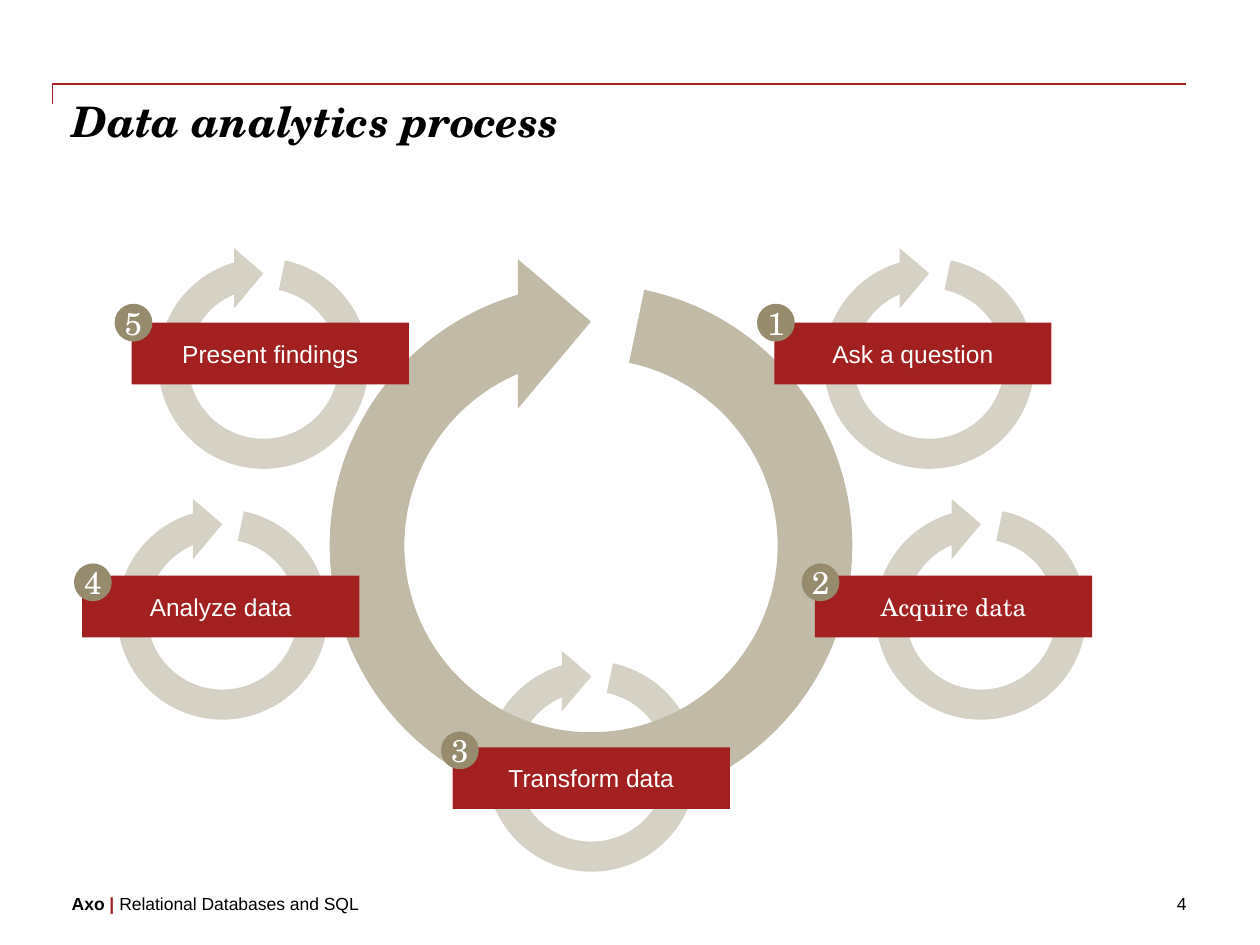
from pptx import Presentation
from pptx.dml.color import RGBColor as Rgb
from pptx.enum.shapes import MSO_SHAPE as Kind
from pptx.enum.text import MSO_ANCHOR as Anchor, MSO_AUTO_SIZE as Auto, PP_ALIGN as Align
from pptx.util import Pt

SERIF, SANS = "TeX Gyre Schola", "Arial"
RED, TAN, PALE, OLIVE = "A32020", "C0BAA7", "D5D1C5", "968C6D"
BLACK, WHITE = "000000", "FFFFFF"
ARROW = (0.125, 11.423, 204.577, 7.061, 0.125)
FLAT = dict.fromkeys(("margin_left", "margin_top", "margin_right", "margin_bottom"), 0)

STEPS = [
    ("Ask a question", SANS, (462.2, 139), (442.5, 184.3), (432.6, 173.6)),
    ("Acquire data", SERIF, (491.8, 282.3), (465.7, 329), (458.1, 322)),
    ("Transform data", SANS, (269.2, 369.2), (258.7, 427), (252, 418)),
    ("Analyze data", SANS, (58.3, 282.3), (47, 329), (42.3, 322)),
    ("Present findings", SANS, (81.8, 139), (75.3, 184.3), (65.5, 173.6)),
]


def apply(item, values):
    """Set each attribute of an item from a dict."""
    for name, value in values.items():
        setattr(item, name, value)


def tint(hue):
    """Turn a hex string into a colour."""
    return Rgb.from_string(hue)


def write(frame, runs, align=Align.LEFT, **values):
    """Write one paragraph of (text, colour, font values) runs."""
    apply(frame, {"word_wrap": True, "auto_size": Auto.NONE} | values)
    para = frame.paragraphs[0]
    para.alignment = align
    for text, hue, style in runs:
        run = para.add_run()
        run.text = text
        apply(run.font, style)
        run.font.color.rgb = tint(hue)


def shape(slide, kind, box, hue):
    """Add a flat filled shape without outline."""
    item = slide.shapes.add_shape(kind, *map(Pt, box))
    item.shadow.inherit = False
    item.fill.solid()
    item.fill.fore_color.rgb = tint(hue)
    item.line.fill.background()
    return item


def ring(slide, box, hue):
    """Add a circular arrow that starts at the top of its box."""
    item = shape(slide, Kind.CIRCULAR_ARROW, box, hue)
    for i, value in enumerate(ARROW):
        item.adjustments[i] = value
    item.rotation = 270


def label(slide, kind, box, hue, text, style, **values):
    """Add a shape with white centred text."""
    item = shape(slide, kind, box, hue)
    write(item.text_frame, [(text, WHITE, style)], Align.CENTER,
          vertical_anchor=Anchor.MIDDLE, **values)


def head(slide, box):
    """Draw the corner rule and the title below it."""
    x, y, w, h = box
    pen = slide.shapes.build_freeform(Pt(x), Pt(y + 11.5))
    pen.add_line_segments([(Pt(x), Pt(y)), (Pt(x + w), Pt(y))], close=False)
    rule = pen.convert_to_shape()
    rule.shadow.inherit = False
    rule.fill.background()
    rule.line.color.rgb = tint(RED)
    rule.line.width = Pt(1)
    title = slide.shapes.title
    apply(title, {"left": Pt(x + 11.5), "top": Pt(y + 6.7),
                  "width": Pt(w - 12), "height": Pt(h)})
    style = {"name": SERIF, "size": Pt(24), "bold": True, "italic": True}
    write(title.text_frame, [("Data analytics process", BLACK, style)],
          vertical_anchor=Anchor.TOP, **FLAT)


def cycle(slide, box):
    """Draw the large ring with the five numbered steps around it."""
    x, y, size = box
    for _, _, spot, _, _ in STEPS:
        ring(slide, (x + spot[0], y + spot[1], 137.5, 137.5), PALE)
    ring(slide, (x + 167.1, y + 141.1, size, size), TAN)
    for text, font, _, spot, _ in STEPS:
        label(slide, Kind.RECTANGLE, (x + spot[0], y + spot[1], 158.4, 35.3), RED,
              text, {"name": font, "size": Pt(14)})
    for i, (*_, spot) in enumerate(STEPS, 1):
        label(slide, Kind.OVAL, (x + spot[0], y + spot[1], 21.6, 21.6), OLIVE,
              str(i), {"name": SERIF, "size": Pt(18)}, **FLAT)


def foot(slide, box):
    """Write the footer at the left and the page number at the right."""
    x, y, w, h = box
    plain = {"name": SANS, "size": Pt(10), "bold": False}
    bold = plain | {"bold": True}
    name = [("Axo", BLACK, bold), (" | ", RED, bold),
            ("Relational Databases and SQL", BLACK, plain)]
    parts = [(x, w - 120, name, Align.LEFT),
             (x + w - 120, 120, [("4", BLACK, plain)], Align.RIGHT)]
    for left, wide, runs, align in parts:
        item = slide.shapes.add_textbox(*map(Pt, (left, y, wide, h)))
        write(item.text_frame, runs, align, **FLAT)


def main():
    """Build the slide and save it."""
    deck = Presentation()
    apply(deck, {"slide_width": Pt(720), "slide_height": Pt(540)})
    slide = deck.slides.add_slide(deck.slide_layouts[5])
    head(slide, (30, 48, 648, 28.8))
    cycle(slide, (0, 0, 341.3))
    foot(slide, (41, 510, 637, 12))
    deck.save("out.pptx")


if __name__ == "__main__":
    main()
